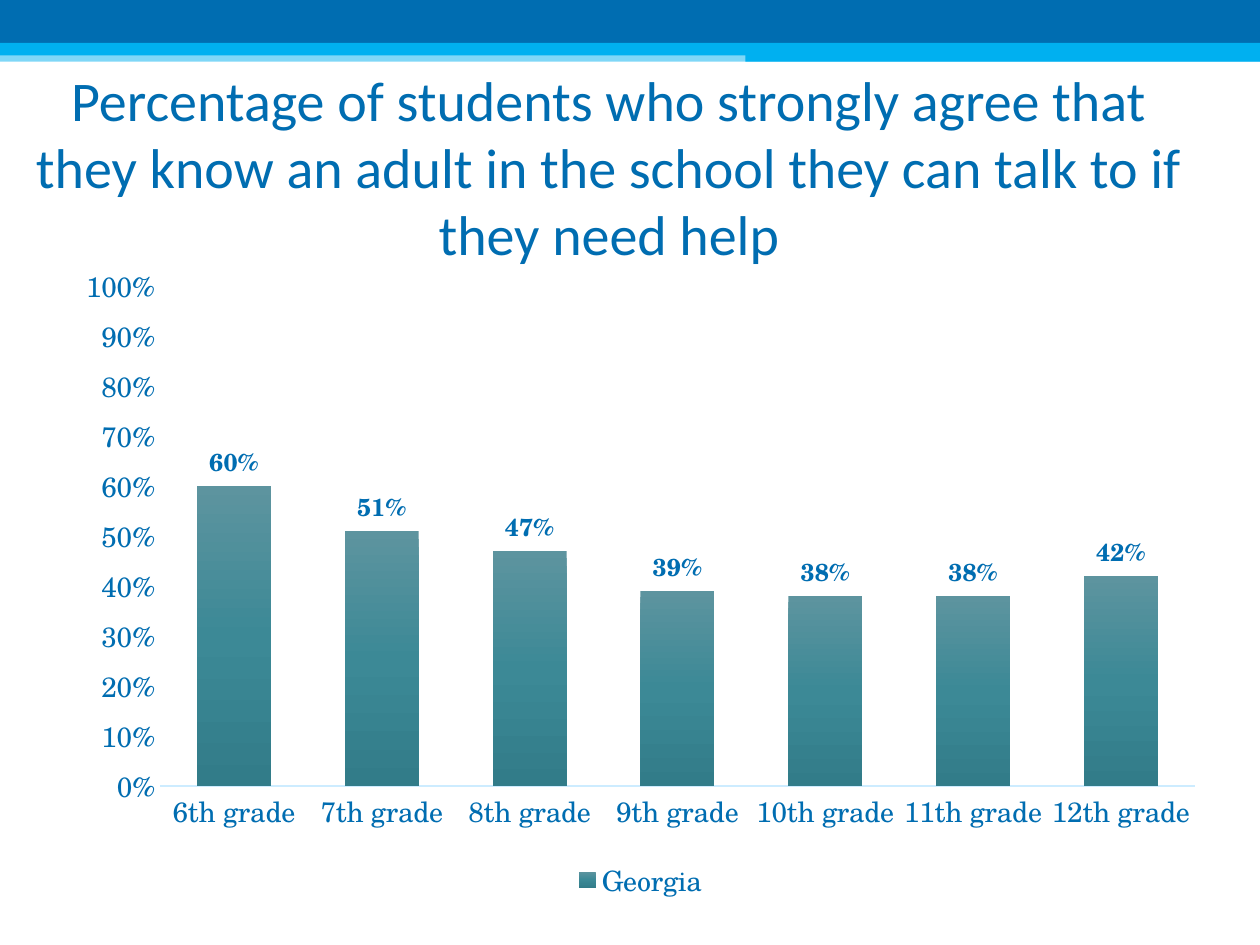
from typing import NamedTuple

from pptx import Presentation
from pptx.chart.data import CategoryChartData
from pptx.dml.color import RGBColor
from pptx.enum.chart import XL_CHART_TYPE, XL_LABEL_POSITION, XL_LEGEND_POSITION, XL_TICK_MARK
from pptx.enum.shapes import MSO_SHAPE
from pptx.enum.text import MSO_ANCHOR, PP_ALIGN
from pptx.oxml import parse_xml
from pptx.oxml.ns import nsdecls, qn
from pptx.util import Pt

BLUE = RGBColor(0x00, 0x6D, 0xB1)
SKY = RGBColor(0x00, 0xB0, 0xF0)
PALE = RGBColor(0xCD, 0xEC, 0xFF)
BAR_STOPS = {
    0: RGBColor(0x5D, 0x94, 0x9F),
    50: RGBColor(0x3C, 0x89, 0x96),
    100: RGBColor(0x32, 0x7C, 0x89),
}
CHART_FONT = "TeX Gyre Schola"
TITLE = ("Percentage of students who strongly agree that they know an adult "
         "in the school they can talk to if they need help")
GRADES = [f"{n}th grade" for n in range(6, 13)]
SHARES = [0.6, 0.51, 0.47, 0.39, 0.38, 0.38, 0.42]


class Band(NamedTuple):
    left: float
    top: float
    width: float
    height: float
    color: RGBColor
    opacity: int = 100


BANDS = [
    Band(0, 28.8, 720, 6.5, SKY, 50),
    Band(0, 0, 720, 24.5, BLUE),
    Band(0, 24.5, 720, 7.2, SKY),
    Band(426, 28.1, 294, 7.2, SKY),
]


def add_band(slide, band: Band) -> None:
    sp = slide.shapes.add_shape(MSO_SHAPE.RECTANGLE, Pt(band.left), Pt(band.top),
                                Pt(band.width), Pt(band.height))
    sp.shadow.inherit = False
    sp.line.fill.background()
    sp.fill.solid()
    sp.fill.fore_color.rgb = band.color
    if band.opacity < 100:
        clr = sp._element.spPr.find(f"{qn('a:solidFill')}/{qn('a:srgbClr')}")
        clr.append(parse_xml(f'<a:alpha {nsdecls("a")} val="{band.opacity * 1000}"/>'))


def style_font(font, *, size: float, color: RGBColor = BLUE,
               name: str = CHART_FONT, bold: bool = False) -> None:
    font.size, font.name, font.bold = Pt(size), name, bold
    font.color.rgb = color


def add_text(slide, text: str, *, left: float, top: float, width: float, height: float,
             size: float, name: str, bottom_inset: float = 3.6) -> None:
    sp = slide.shapes.add_textbox(Pt(left), Pt(top), Pt(width), Pt(height))
    tf = sp.text_frame
    tf.word_wrap = True
    tf.vertical_anchor = MSO_ANCHOR.MIDDLE
    tf.margin_bottom = Pt(bottom_inset)
    p = tf.paragraphs[0]
    p.alignment = PP_ALIGN.CENTER
    r = p.add_run()
    r.text = text
    style_font(r.font, size=size, name=name)


def fill_gradient(series, stops: dict[int, RGBColor]) -> None:
    """Fill the bars from top to bottom through the given percent stops."""
    gs = "".join(f'<a:gs pos="{pos * 1000}"><a:srgbClr val="{color}"/></a:gs>'
                 for pos, color in stops.items())
    series._element.get_or_add_spPr().append(parse_xml(
        f'<a:gradFill {nsdecls("a")} rotWithShape="1"><a:gsLst>{gs}</a:gsLst>'
        '<a:lin ang="5400000" scaled="0"/></a:gradFill>'))


def place_plot(chart, x: float, y: float, w: float, h: float) -> None:
    """Fix the inner plot area, in fractions of the chart."""
    area = chart._chartSpace.chart.plotArea
    for old in area.findall(qn("c:layout")):
        area.remove(old)
    area.insert(0, parse_xml(
        f'<c:layout {nsdecls("c")}><c:manualLayout><c:layoutTarget val="inner"/>'
        '<c:xMode val="edge"/><c:yMode val="edge"/>'
        f'<c:x val="{x}"/><c:y val="{y}"/><c:w val="{w}"/><c:h val="{h}"/>'
        '</c:manualLayout></c:layout>'))


def add_grade_chart(slide) -> None:
    data = CategoryChartData(number_format="0%")
    data.categories = GRADES
    data.add_series("Georgia", SHARES)
    chart = slide.shapes.add_chart(XL_CHART_TYPE.COLUMN_CLUSTERED, Pt(36), Pt(144),
                                   Pt(660), Pt(373.7), data).chart
    chart.has_title = False
    style_font(chart.font, size=10, color=RGBColor(0, 0, 0))
    place_plot(chart, 0.084, 0.052, 0.896, 0.765)

    chart.has_legend = True
    chart.legend.position = XL_LEGEND_POSITION.BOTTOM
    chart.legend.include_in_layout = False
    style_font(chart.legend.font, size=16)

    for axis in (chart.category_axis, chart.value_axis):
        axis.major_tick_mark = axis.minor_tick_mark = XL_TICK_MARK.NONE
        axis.has_major_gridlines = False
        style_font(axis.tick_labels.font, size=16)
    chart.category_axis.format.line.color.rgb = PALE
    chart.category_axis.format.line.width = Pt(0.75)
    values = chart.value_axis
    values.format.line.fill.background()
    values.minimum_scale, values.maximum_scale, values.major_unit = 0, 1, 0.1
    values.tick_labels.number_format = "0%"
    values.tick_labels.number_format_is_linked = False

    plot = chart.plots[0]
    plot.gap_width, plot.overlap = 100, -24
    plot.vary_by_categories = False
    series = plot.series[0]
    series.invert_if_negative = False
    fill_gradient(series, BAR_STOPS)
    labels = series.data_labels
    labels.show_value = True
    labels.position = XL_LABEL_POSITION.OUTSIDE_END
    labels.number_format = "0%"
    labels.number_format_is_linked = False
    style_font(labels.font, size=14, bold=True)


def main() -> None:
    prs = Presentation()
    prs.slide_width, prs.slide_height = Pt(720), Pt(540)
    slide = prs.slides.add_slide(prs.slide_layouts[6])
    for band in BANDS:
        add_band(slide, band)
    add_text(slide, TITLE, left=12, top=72, width=672, height=84,
             size=32, name="Calibri", bottom_inset=42)
    add_grade_chart(slide)
    prs.save("out.pptx")


if __name__ == "__main__":
    main()
